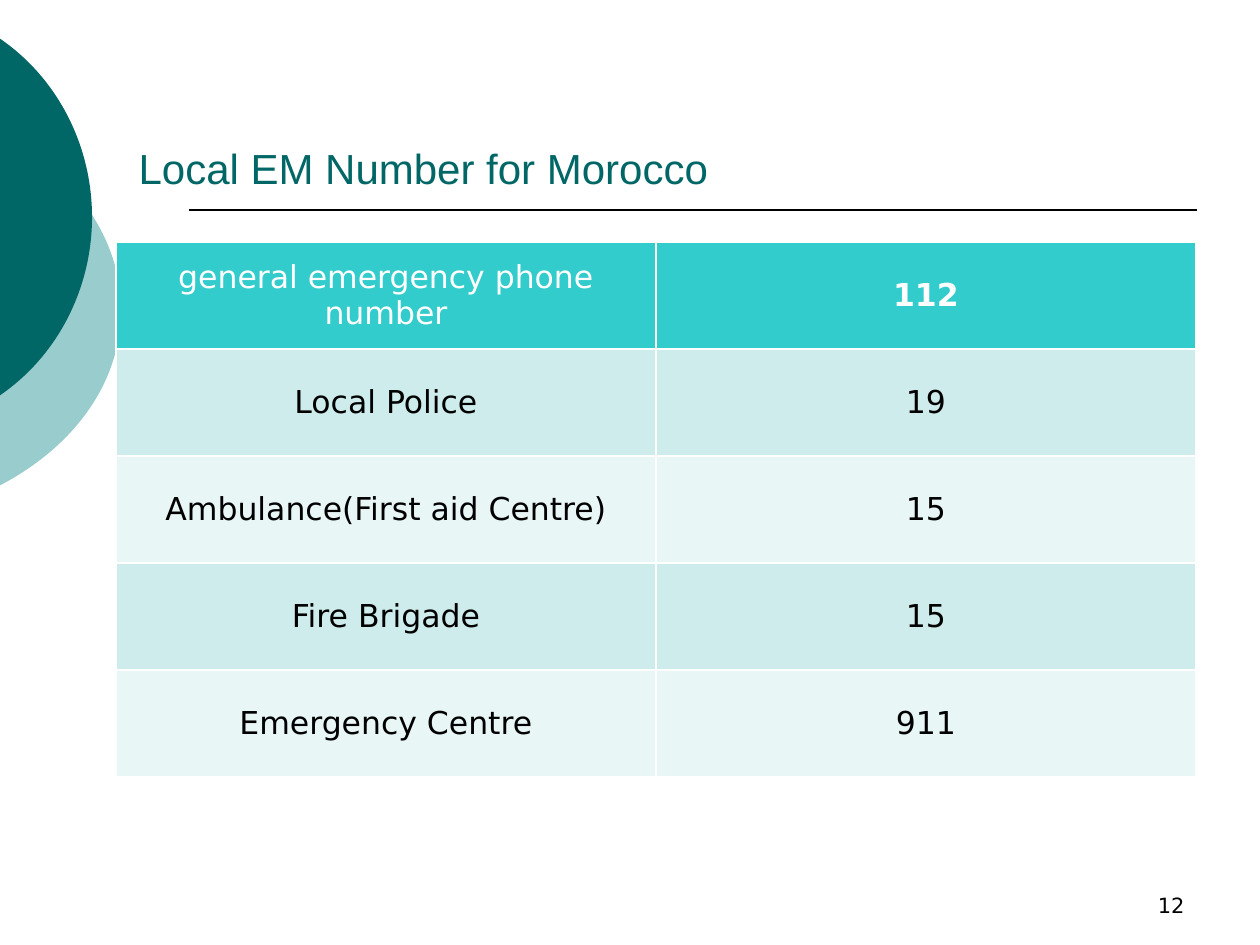
from dataclasses import dataclass

from lxml import etree
from pptx import Presentation
from pptx import util as u
from pptx.dml.color import RGBColor
from pptx.enum import shapes as kinds
from pptx.enum import text as t
from pptx.oxml.ns import qn

PX_PER_INCH = 126
COLORS = {
    "teal": "006666",
    "mist": "99CCCC",
    "header": "33CCCC",
    "band_dark": "CEECEC",
    "band_light": "E8F6F6",
    "black": "000000",
    "white": "FFFFFF",
}
BODY_FONT = "DejaVu Sans"


@dataclass(frozen=True)
class EdgeDisc:
    """A disc cut off by the left slide edge; curve is its upper half."""
    left: int
    top: int
    width: int
    height: int
    curve: tuple[tuple[int, int], ...]
    color: str


@dataclass(frozen=True)
class Contact:
    service: str
    number: str


DISCS = [
    EdgeDisc(-446, 94, 567, 431, ((-1, 134), (76, 174), (121, 239), (121, 310)), "mist"),
    EdgeDisc(-334, 0, 426, 435, ((-1, 38), (58, 78), (92, 146), (92, 217)), "teal"),
]
CONTACTS = [
    Contact("general emergency phone number", "112"),
    Contact("Local Police", "19"),
    Contact("Ambulance(First aid Centre)", "15"),
    Contact("Fire Brigade", "15"),
    Contact("Emergency Centre", "911"),
]


def px(length: int) -> int:
    return round(length * u.Inches(1) / PX_PER_INCH)


def rgb(name: str) -> RGBColor:
    return RGBColor.from_string(COLORS[name])


def style(paragraph, size: int, color: str, align, font: str = BODY_FONT, bold: bool = False) -> None:
    paragraph.alignment = align
    paragraph.font.name = font
    paragraph.font.size = u.Pt(size)
    paragraph.font.bold = bold
    paragraph.font.color.rgb = rgb(color)


def draw_disc(slide, disc: EdgeDisc) -> None:
    # The frame of the whole disc
    right, bottom = disc.left + disc.width, disc.top + disc.height
    builder = slide.shapes.build_freeform(px(disc.left), px(disc.top))
    builder.add_line_segments([(px(right), px(disc.top)), (px(right), px(bottom)), (px(disc.left), px(bottom))])
    shape = builder.convert_to_shape()

    # Its outline: the upper curve and the same curve mirrored
    middle = disc.curve[-1][1]
    lower = [(x, 2 * middle - y) for x, y in reversed(disc.curve[:-1])]
    outline = next(shape._element.iter(qn("a:path")))
    for segment in list(outline):
        outline.remove(segment)
    for command, points in (("moveTo", disc.curve[:1]), ("cubicBezTo", disc.curve[1:]),
                            ("cubicBezTo", lower), ("close", ())):
        segment = etree.SubElement(outline, qn(f"a:{command}"))
        for x, y in points:
            etree.SubElement(segment, qn("a:pt"), x=str(px(x - disc.left)), y=str(px(y - disc.top)))

    shape.shadow.inherit = False
    shape.fill.solid()
    shape.fill.fore_color.rgb = rgb(disc.color)
    shape.line.fill.background()


def draw_rule(slide, left: int, right: int, y: int) -> None:
    rule = slide.shapes.add_connector(kinds.MSO_CONNECTOR.STRAIGHT, px(left), px(y), px(right), px(y))
    rule.line.color.rgb = rgb("black")
    rule.line.width = u.Pt(1)
    etree.SubElement(rule._element.spPr, qn("a:effectLst"))


def draw_contacts(slide, left: int, top: int, column: int, row: int) -> None:
    # White cell borders come from the default table style
    count = len(CONTACTS)
    table = slide.shapes.add_table(count, 2, px(left), px(top), px(2 * column), px(count * row)).table
    for i, contact in enumerate(CONTACTS):
        header = i == 0
        fill = "header" if header else ("band_light", "band_dark")[i % 2]
        for j, wording in enumerate((contact.service, contact.number)):
            cell = table.cell(i, j)
            cell.text = wording
            cell.vertical_anchor = t.MSO_ANCHOR.MIDDLE
            cell.fill.solid()
            cell.fill.fore_color.rgb = rgb(fill)
            style(cell.text_frame.paragraphs[0], 18, "white" if header else "black",
                  t.PP_ALIGN.CENTER, bold=header and j == 1)


def draw_title(slide, wording: str) -> None:
    title = slide.shapes.title
    title.left, title.top, title.width, title.height = map(px, (126, 42, 1071, 157))
    frame = title.text_frame
    frame.text = wording
    frame.auto_size = t.MSO_AUTO_SIZE.NONE
    frame.vertical_anchor = t.MSO_ANCHOR.BOTTOM
    style(frame.paragraphs[0], 24, "teal", t.PP_ALIGN.LEFT, font="Arial")


def draw_page_number(slide, number: str) -> None:
    frame = slide.shapes.add_textbox(*map(px, (903, 861, 294, 63))).text_frame
    frame.text = number
    frame.word_wrap = True
    frame.vertical_anchor = t.MSO_ANCHOR.BOTTOM
    style(frame.paragraphs[0], 12, "black", t.PP_ALIGN.RIGHT)


def main() -> None:
    deck = Presentation()
    deck.slide_width, deck.slide_height = px(1260), px(945)
    slide = deck.slides.add_slide(deck.slide_layouts[5])

    # Backdrop
    for disc in DISCS:
        draw_disc(slide, disc)
    draw_rule(slide, 189, 1197, 210)

    # Content
    draw_title(slide, "Local EM Number for Morocco")
    draw_page_number(slide, "12")
    draw_contacts(slide, left=116, top=242, column=540, row=107)

    deck.save("out.pptx")


if __name__ == "__main__":
    main()
